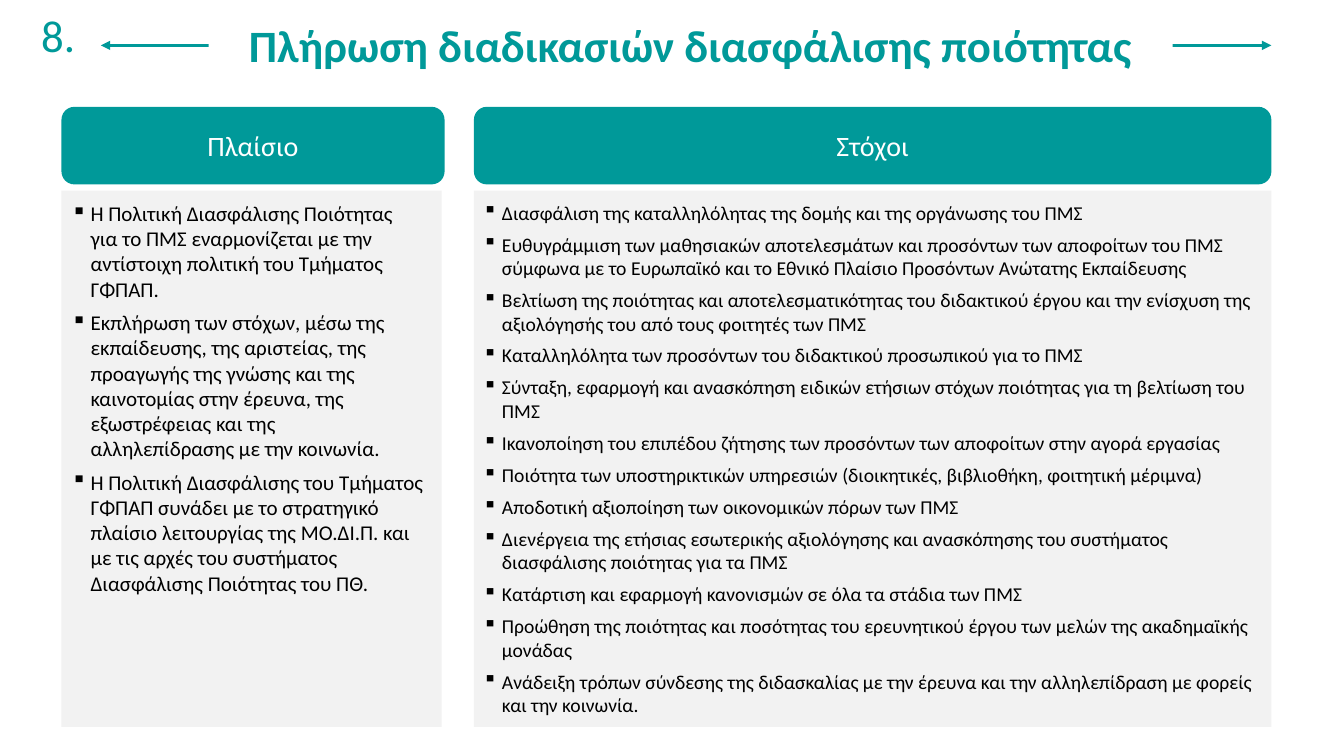
from dataclasses import dataclass

from lxml import etree
from pptx import Presentation
from pptx import util as u
from pptx.dml.color import RGBColor
from pptx.enum import shapes, text
from pptx.oxml.ns import qn

FONT = "Calibri"
HUES = {"teal": "009999", "panel": "F2F2F2", "white": "FFFFFF", "black": "000000"}
INDENT = 0.19
KINDS = shapes.MSO_SHAPE


@dataclass
class Box:
    left: float
    top: float
    width: float
    height: float

    def emu(self) -> list:
        return [u.Inches(v) for v in (self.left, self.top, self.width, self.height)]


@dataclass
class Column:
    title: str
    head: Box
    panel: Box
    body: Box
    size: int
    items: list[str]


COLUMNS = [
    Column("Πλαίσιο", Box(0.61, 1.06, 3.8, 0.77), Box(0.61, 1.89, 3.77, 5.32),
           Box(0.61, 1.94, 3.69, 4.31), 15, [
        "Η Πολιτική Διασφάλισης Ποιότητας για το ΠΜΣ εναρμονίζεται με την αντίστοιχη πολιτική του Τμήματος ΓΦΠΑΠ.",
        "Εκπλήρωση των στόχων, μέσω της εκπαίδευσης, της αριστείας, της προαγωγής της γνώσης και της καινοτομίας στην έρευνα, της εξωστρέφειας και της αλληλεπίδρασης με την κοινωνία.",
        "Η Πολιτική Διασφάλισης του Τμήματος ΓΦΠΑΠ συνάδει με το στρατηγικό πλαίσιο λειτουργίας της ΜΟ.ΔΙ.Π. και με τις αρχές του συστήματος Διασφάλισης Ποιότητας του ΠΘ.",
    ]),
    Column("Στόχοι", Box(4.7, 1.06, 7.91, 0.77), Box(4.7, 1.89, 7.91, 5.32),
           Box(4.69, 1.94, 7.92, 5.27), 14, [
        "Διασφάλιση της καταλληλόλητας της δομής και της οργάνωσης του ΠΜΣ",
        "Ευθυγράμμιση των μαθησιακών αποτελεσμάτων και προσόντων των αποφοίτων του ΠΜΣ σύμφωνα με το Ευρωπαϊκό και το Εθνικό Πλαίσιο Προσόντων Ανώτατης Εκπαίδευσης",
        "Βελτίωση της ποιότητας και αποτελεσματικότητας του διδακτικού έργου και την ενίσχυση της αξιολόγησής του από τους φοιτητές των ΠΜΣ",
        "Καταλληλόλητα των προσόντων του διδακτικού προσωπικού για το ΠΜΣ",
        "Σύνταξη, εφαρμογή και ανασκόπηση ειδικών ετήσιων στόχων ποιότητας για τη βελτίωση του ΠΜΣ",
        "Ικανοποίηση του επιπέδου ζήτησης των προσόντων των αποφοίτων στην αγορά εργασίας",
        "Ποιότητα των υποστηρικτικών υπηρεσιών (διοικητικές, βιβλιοθήκη, φοιτητική μέριμνα)",
        "Αποδοτική αξιοποίηση των οικονομικών πόρων των ΠΜΣ",
        "Διενέργεια της ετήσιας εσωτερικής αξιολόγησης και ανασκόπησης του συστήματος διασφάλισης ποιότητας για τα ΠΜΣ",
        "Κατάρτιση και εφαρμογή κανονισμών σε όλα τα στάδια των ΠΜΣ",
        "Προώθηση της ποιότητας και ποσότητας του ερευνητικού έργου των μελών της ακαδημαϊκής μονάδας",
        "Ανάδειξη τρόπων σύνδεσης της διδασκαλίας με την έρευνα και την αλληλεπίδραση με φορείς και την κοινωνία.",
    ]),
]


def rgb(hue: str) -> RGBColor:
    return RGBColor.from_string(HUES[hue])


def block(slide, kind, box: Box, hue: str):
    shape = slide.shapes.add_shape(kind, *box.emu())
    shape.shadow.inherit = False
    shape.fill.solid()
    shape.fill.fore_color.rgb = rgb(hue)
    shape.line.fill.background()
    return shape


def write(shape, words: str, size: int, hue: str, bold: bool = False,
          align=text.PP_ALIGN.LEFT, wrap: bool = True) -> None:
    """Fill a shape with text, one paragraph a line, in one style."""
    frame = shape.text_frame
    frame.word_wrap = wrap
    frame.text = words
    for para in frame.paragraphs:
        para.alignment = align
        for run in para.runs:
            run.font.name = FONT
            run.font.size = u.Pt(size)
            run.font.bold = bold
            run.font.color.rgb = rgb(hue)


def grow(shape) -> None:
    """Anchor text at the top and let the shape follow its height."""
    shape.text_frame.vertical_anchor = text.MSO_ANCHOR.TOP
    shape.text_frame.auto_size = text.MSO_AUTO_SIZE.SHAPE_TO_FIT_TEXT


def bullet(para) -> None:
    para.space_after = u.Pt(6)
    props = para._p.get_or_add_pPr()
    props.set("marL", str(u.Inches(INDENT)))
    props.set("indent", str(-u.Inches(INDENT)))
    etree.SubElement(props, qn("a:buChar"), char="▪")


def arrow(slide, left: float, right: float, y: float) -> None:
    """Draw a level line with an arrowhead at both ends."""
    line = slide.shapes.add_connector(
        shapes.MSO_CONNECTOR.STRAIGHT,
        u.Inches(left), u.Inches(y), u.Inches(right), u.Inches(y))
    line.line.color.rgb = rgb("teal")
    line.line.width = u.Pt(2.25)
    stroke = line.line._get_or_add_ln()
    for end in ("a:headEnd", "a:tailEnd"):
        etree.SubElement(stroke, qn(end), type="triangle")
    etree.SubElement(line._element.spPr, qn("a:effectLst"))


def column(slide, col: Column) -> None:
    block(slide, KINDS.RECTANGLE, col.panel, "panel")
    head = block(slide, KINDS.ROUNDED_RECTANGLE, col.head, "teal")
    write(head, col.title, 20, "white", align=text.PP_ALIGN.CENTER)
    head.text_frame.vertical_anchor = text.MSO_ANCHOR.MIDDLE
    body = slide.shapes.add_textbox(*col.body.emu())
    write(body, "\n".join(col.items), col.size, "black")
    for para in body.text_frame.paragraphs:
        bullet(para)
    grow(body)


def main() -> None:
    deck = Presentation()
    deck.slide_width, deck.slide_height = u.Inches(13.33), u.Inches(7.5)
    slide = deck.slides.add_slide(deck.slide_layouts[6])

    arrow(slide, 1, 12.61, 0.45)
    title = block(slide, KINDS.RECTANGLE, Box(2.07, 0.13, 9.56, 0.64), "white")
    write(title, "Πλήρωση διαδικασιών διασφάλισης ποιότητας", 32, "teal",
          bold=True, align=text.PP_ALIGN.CENTER)
    grow(title)
    number = slide.shapes.add_textbox(*Box(0.31, 0.03, 0.54, 0.64).emu())
    write(number, "8.", 32, "teal", wrap=False)
    grow(number)

    for col in COLUMNS:
        column(slide, col)
    deck.save("out.pptx")


if __name__ == "__main__":
    main()
